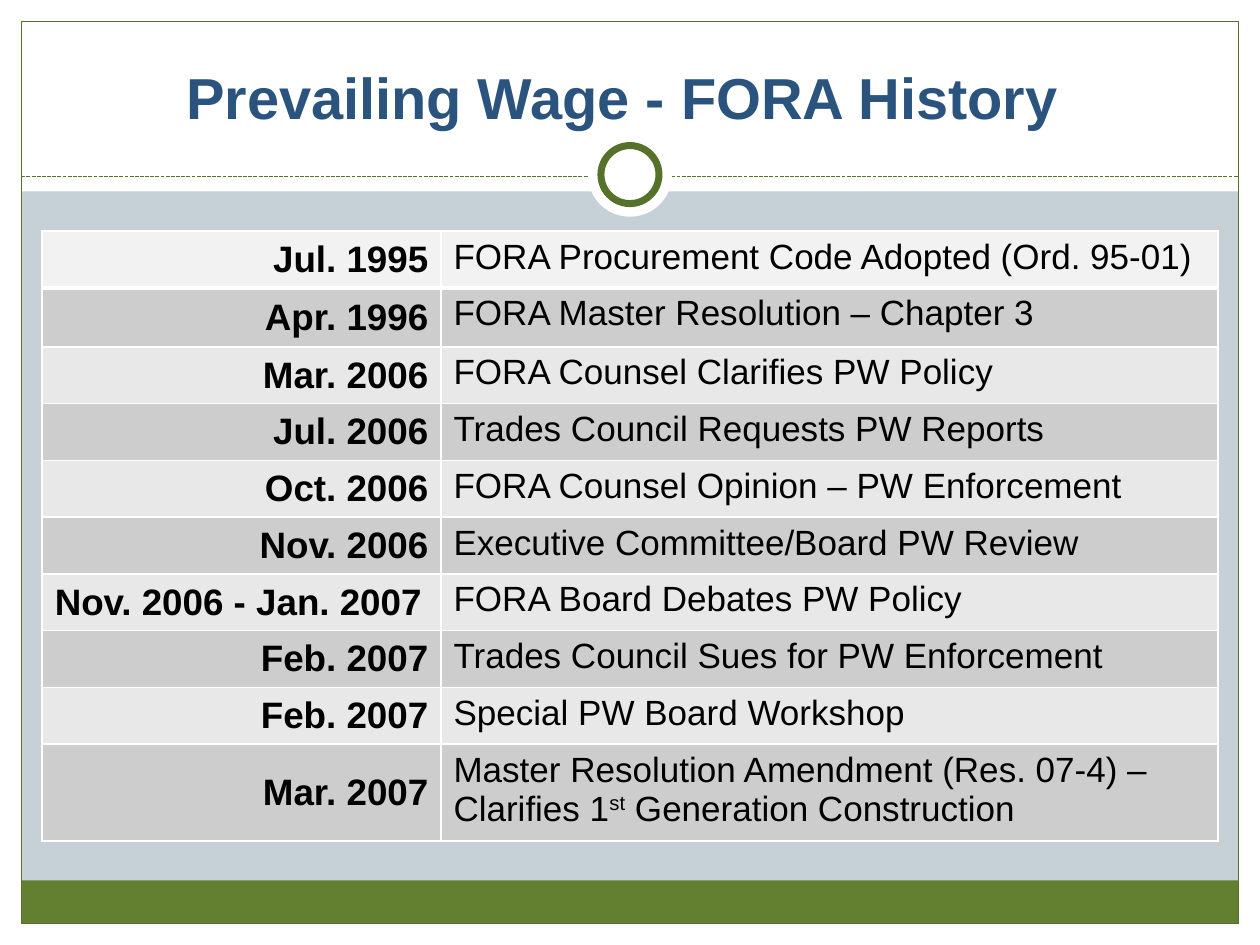
from dataclasses import dataclass

from lxml import etree
from pptx import Presentation
from pptx.dml.color import RGBColor
from pptx.enum.dml import MSO_LINE
from pptx.enum.shapes import MSO_CONNECTOR, MSO_SHAPE
from pptx.enum.text import MSO_ANCHOR, PP_ALIGN
from pptx.oxml.ns import qn
from pptx.util import Cm, Pt

LEFT, CENTER, RIGHT = PP_ALIGN.LEFT, PP_ALIGN.CENTER, PP_ALIGN.RIGHT
TOP, MIDDLE, BOTTOM = MSO_ANCHOR.TOP, MSO_ANCHOR.MIDDLE, MSO_ANCHOR.BOTTOM
RECTANGLE, OVAL = MSO_SHAPE.RECTANGLE, MSO_SHAPE.OVAL
DASHED = MSO_LINE.SQUARE_DOT

TITLE = "Prevailing Wage - FORA History "
# Date, its alignment, and the event; a tuple marks superscript by its middle part.
HISTORY = [
    ("Jul. 1995", RIGHT, "FORA Procurement Code Adopted (Ord. 95-01)"),
    ("Apr. 1996", RIGHT, "FORA Master Resolution – Chapter 3"),
    ("Mar. 2006", RIGHT, "FORA Counsel Clarifies PW Policy"),
    ("Jul. 2006", RIGHT, "Trades Council Requests PW Reports"),
    ("Oct. 2006", RIGHT, "FORA Counsel Opinion – PW Enforcement"),
    ("Nov. 2006", RIGHT, "Executive Committee/Board PW Review"),
    ("Nov. 2006 - Jan. 2007", LEFT, "FORA Board Debates PW Policy"),
    ("Feb. 2007", RIGHT, "Trades Council Sues for PW Enforcement"),
    ("Feb. 2007", RIGHT, "Special PW Board Workshop"),
    ("Mar. 2007", RIGHT, ("Master Resolution Amendment (Res. 07-4) – Clarifies 1",
                          "st", " Generation Construction")),
]


@dataclass(frozen=True)
class Theme:
    font: str = "Arial"
    background: str = "C5D1D7"
    white: str = "FFFFFF"
    green: str = "628030"
    outline: str = "56712A"
    title: str = "2A547E"
    text: str = "000000"
    first_row: str = "F2F2F2"
    bands: tuple = ("E8E8E8", "CECDCD")
    title_size: int = 33
    date_size: int = 21
    event_size: int = 20


THEME = Theme()
WIDTH, HEIGHT = 25.4, 19.05
MARGIN = 0.43
HEADER_HEIGHT = 3.86
RULE_TOP = 3.56
RING_CENTER = 3.52
COLUMN_WIDTHS = (8.04, 15.66)
ROW_HEIGHT = 1.08
TALL_ROWS = {1: 1.19, len(HISTORY) - 1: 1.81}


def rgb(color):
    return RGBColor.from_string(color)


def write_text(frame, text, *, size, color=THEME.text, bold=False, align=LEFT):
    """Write a string, or a tuple of parts in which every second one is superscript."""
    paragraph = frame.paragraphs[0]
    paragraph.alignment = align
    parts = (text,) if isinstance(text, str) else text
    for index, part in enumerate(parts):
        run = paragraph.add_run()
        run.text = part
        run.font.name = THEME.font
        run.font.size = Pt(size)
        run.font.bold = bold
        run.font.color.rgb = rgb(color)
        if index % 2:
            run.font._element.set("baseline", "30000")


def add_panel(slide, kind, left, top, width, height, fill=None, line=None, weight=0.75):
    shape = slide.shapes.add_shape(kind, Cm(left), Cm(top), Cm(width), Cm(height))
    shape.shadow.inherit = False
    if fill:
        shape.fill.solid()
        shape.fill.fore_color.rgb = rgb(fill)
    else:
        shape.fill.background()
    if line:
        shape.line.color.rgb = rgb(line)
        shape.line.width = Pt(weight)
    else:
        shape.line.fill.background()


def add_circle(slide, diameter, **style):
    add_panel(slide, OVAL, (WIDTH - diameter) / 2, RING_CENTER - diameter / 2,
              diameter, diameter, fill=THEME.white, **style)


def add_frame(slide):
    inner_width = WIDTH - 2 * MARGIN
    inner_bottom = HEIGHT - MARGIN
    for box in [(0, inner_bottom, WIDTH, MARGIN), (0, 0, WIDTH, HEADER_HEIGHT),
                (0, 0, MARGIN, HEIGHT), (WIDTH - MARGIN, 0, MARGIN, HEIGHT)]:
        add_panel(slide, RECTANGLE, *box, fill=THEME.white)
    add_panel(slide, RECTANGLE, MARGIN, 17.75, inner_width, inner_bottom - 17.75,
              fill=THEME.green)
    add_panel(slide, RECTANGLE, MARGIN, MARGIN, inner_width, HEIGHT - 2 * MARGIN,
              line=THEME.outline)
    rule = slide.shapes.add_connector(MSO_CONNECTOR.STRAIGHT, Cm(MARGIN), Cm(RULE_TOP),
                                      Cm(WIDTH - MARGIN), Cm(RULE_TOP))
    rule.line.color.rgb = rgb(THEME.outline)
    rule.line.width = Pt(0.75)
    rule.line.dash_style = DASHED
    etree.SubElement(rule._element.spPr, qn("a:effectLst"))
    add_circle(slide, 1.7)
    add_circle(slide, 1.17, line=THEME.outline, weight=4)


def add_title(slide):
    box = slide.shapes.add_textbox(Cm(0.64), Cm(1.07), Cm(24.13), Cm(1.7))
    box.text_frame.word_wrap = True
    box.text_frame.vertical_anchor = BOTTOM
    write_text(box.text_frame, TITLE, size=THEME.title_size, color=THEME.title,
               bold=True, align=CENTER)


def set_borders(cell, top, bottom):
    """Draw white borders, with the top and bottom weights in points."""
    properties = cell._tc.get_or_add_tcPr()
    sides = {"a:lnL": 1, "a:lnR": 1, "a:lnT": top, "a:lnB": bottom}
    for position, (side, weight) in enumerate(sides.items()):
        line = etree.Element(qn(side), w=str(Pt(weight)))
        fill = etree.SubElement(line, qn("a:solidFill"))
        etree.SubElement(fill, qn("a:srgbClr"), val=THEME.white)
        properties.insert(position, line)


def add_history(slide):
    heights = [TALL_ROWS.get(row, ROW_HEIGHT) for row in range(len(HISTORY))]
    table = slide.shapes.add_table(len(HISTORY), 2, Cm(0.85), Cm(4.66),
                                   Cm(sum(COLUMN_WIDTHS)), Cm(sum(heights))).table
    for column, width in zip(table.columns, COLUMN_WIDTHS):
        column.width = Cm(width)
    for index, (date, align, event) in enumerate(HISTORY):
        table.rows[index].height = Cm(heights[index])
        date_cell, event_cell = table.cell(index, 0), table.cell(index, 1)
        date_cell.vertical_anchor = MIDDLE
        event_cell.vertical_anchor = TOP
        write_text(date_cell.text_frame, date, size=THEME.date_size, bold=True, align=align)
        write_text(event_cell.text_frame, event, size=THEME.event_size)
        for cell in (date_cell, event_cell):
            cell.fill.solid()
            cell.fill.fore_color.rgb = rgb(THEME.bands[index % 2] if index
                                           else THEME.first_row)
            set_borders(cell, top=3 if index == 1 else 1, bottom=1 if index else 3)


def main():
    presentation = Presentation()
    presentation.slide_width, presentation.slide_height = Cm(WIDTH), Cm(HEIGHT)
    slide = presentation.slides.add_slide(presentation.slide_layouts[6])
    slide.background.fill.solid()
    slide.background.fill.fore_color.rgb = rgb(THEME.background)
    add_frame(slide)
    add_title(slide)
    add_history(slide)
    presentation.save("out.pptx")


if __name__ == "__main__":
    main()
